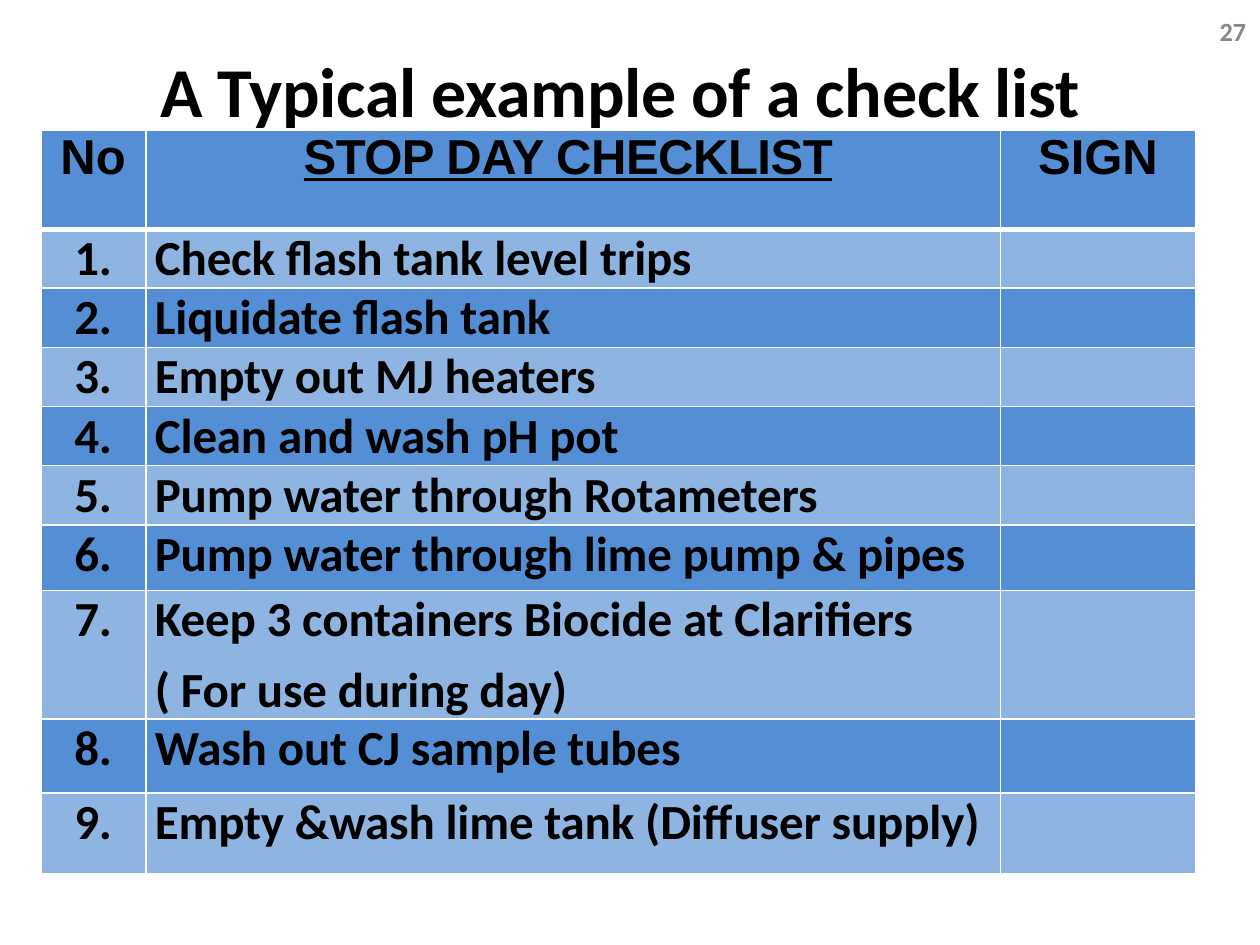
from lxml.etree import SubElement
from pptx import Presentation
from pptx.dml.color import RGBColor
from pptx.enum.text import MSO_ANCHOR, MSO_AUTO_SIZE, PP_ALIGN
from pptx.oxml.ns import qn
from pptx.util import Inches, Pt

COLOURS = {
    "text": "000000",
    "number": "888888",
    "strong": "548ED4",
    "light": "8EB4E2",
    "border": "FFFFFF",
}
TITLE = {"name": "Calibri", "size": Pt(40), "bold": True}
NUMBER = {"name": "Calibri", "size": Pt(15), "bold": True}
ENTRY = {"name": "Calibri", "size": Pt(28), "bold": True}
HEADING = {**ENTRY, "name": "Arial"}
UNDERLINED = {**HEADING, "underline": True}

COLUMNS = [0.83, 6.78, 1.55]
ROWS = [0.79, 0.45, 0.47, 0.47, 0.47, 0.47, 0.52, 1.02, 0.59, 0.64]
HEADINGS = [
    ("No", 0.15, HEADING, 0),
    ("STOP DAY CHECKLIST", 1.25, UNDERLINED, -0.25),
    ("SIGN", 0.3, HEADING, 0),
]
TASKS = [
    ["Check flash tank level trips"],
    ["Liquidate flash tank"],
    ["Empty out MJ heaters"],
    ["Clean and wash pH pot"],
    ["Pump water through Rotameters"],
    ["Pump water through lime pump & pipes"],
    ["Keep 3 containers Biocide at Clarifiers", "( For use during day)"],
    ["Wash out CJ sample tubes"],
    ["Empty &wash lime tank (Diffuser supply)"],
]


def write(frame, lines, style, colour="text", spacing=0):
    """Write left-aligned paragraphs with letter spacing in points."""
    for index, line in enumerate(lines):
        para = frame.paragraphs[0] if index == 0 else frame.add_paragraph()
        para.alignment = PP_ALIGN.LEFT
        para.space_before = Pt(6 if index else 0)
        span = para.add_run()
        span.text = line
        for name, value in style.items():
            setattr(span.font, name, value)
        span.font.color.rgb = RGBColor.from_string(COLOURS[colour])
        if spacing:
            span.font._element.set("spc", str(round(spacing * 100)))


def set_margins(holder, left=0, top=0):
    """Set the left and top margins in inches and clear the others."""
    holder.margin_left, holder.margin_top = Inches(left), Inches(top)
    holder.margin_right = holder.margin_bottom = 0


def place(box, left, top, width, height):
    """Move and size a shape in inches."""
    box.left, box.top = Inches(left), Inches(top)
    box.width, box.height = Inches(width), Inches(height)


def add_borders(cell, top, bottom):
    """Draw the four cell borders ahead of the cell fill."""
    properties = cell._tc.get_or_add_tcPr()
    widths = {"lnL": 1, "lnR": 1, "lnT": top, "lnB": bottom}
    for index, (tag, width) in enumerate(widths.items()):
        line = SubElement(properties, qn(f"a:{tag}"), w=str(Pt(width)))
        fill = SubElement(line, qn("a:solidFill"))
        SubElement(fill, qn("a:srgbClr"), val=COLOURS["border"])
        properties.insert(index, line)


def add_title(page, text):
    """Fill the title placeholder."""
    box = page.shapes.title
    place(box, 1.18, 0.17, 7.64, 1.16)
    frame = box.text_frame
    frame.auto_size = MSO_AUTO_SIZE.NONE
    frame.vertical_anchor = MSO_ANCHOR.TOP
    set_margins(frame, 0.09, 0.21)
    write(frame, [text], TITLE, spacing=-0.17)


def add_page_number(page, text):
    """Add the page number in the top right corner."""
    box = page.shapes.add_textbox(0, 0, 0, 0)
    place(box, 9.67, 0.12, 0.24, 0.24)
    frame = box.text_frame
    frame.word_wrap = True
    set_margins(frame, 0.01)
    write(frame, [text], NUMBER, "number")


def add_checklist(page):
    """Add the checklist table with alternating row colours."""
    box = page.shapes.add_table(
        len(ROWS), len(COLUMNS), Inches(0.33), Inches(1.03),
        Inches(sum(COLUMNS)), Inches(sum(ROWS)))
    table = box.table
    for column, width in zip(table.columns, COLUMNS):
        column.width = Inches(width)
    for index, (row, height) in enumerate(zip(table.rows, ROWS)):
        row.height = Inches(height)
        shade = COLOURS["light" if index % 2 else "strong"]
        for cell in row.cells:
            set_margins(cell)
            cell.fill.solid()
            cell.fill.fore_color.rgb = RGBColor.from_string(shade)
            add_borders(cell, 3 if index == 1 else 1, 3 if index == 0 else 1)
    for column, (text, indent, style, spacing) in enumerate(HEADINGS):
        cell = table.cell(0, column)
        set_margins(cell, indent)
        write(cell.text_frame, [text], style, spacing=spacing)
    for number, lines in enumerate(TASKS, 1):
        for column, (content, indent) in enumerate([([f"{number}."], 0.26), (lines, 0.07)]):
            cell = table.cell(number, column)
            set_margins(cell, indent)
            write(cell.text_frame, content, ENTRY, spacing=-0.08)


def main():
    """Build and save the checklist slide."""
    deck = Presentation()
    deck.slide_width, deck.slide_height = Inches(10), Inches(7.5)
    page = deck.slides.add_slide(deck.slide_layouts[5])
    add_title(page, "A Typical example of a check list")
    add_page_number(page, "27")
    add_checklist(page)
    deck.save("out.pptx")


if __name__ == "__main__":
    main()
